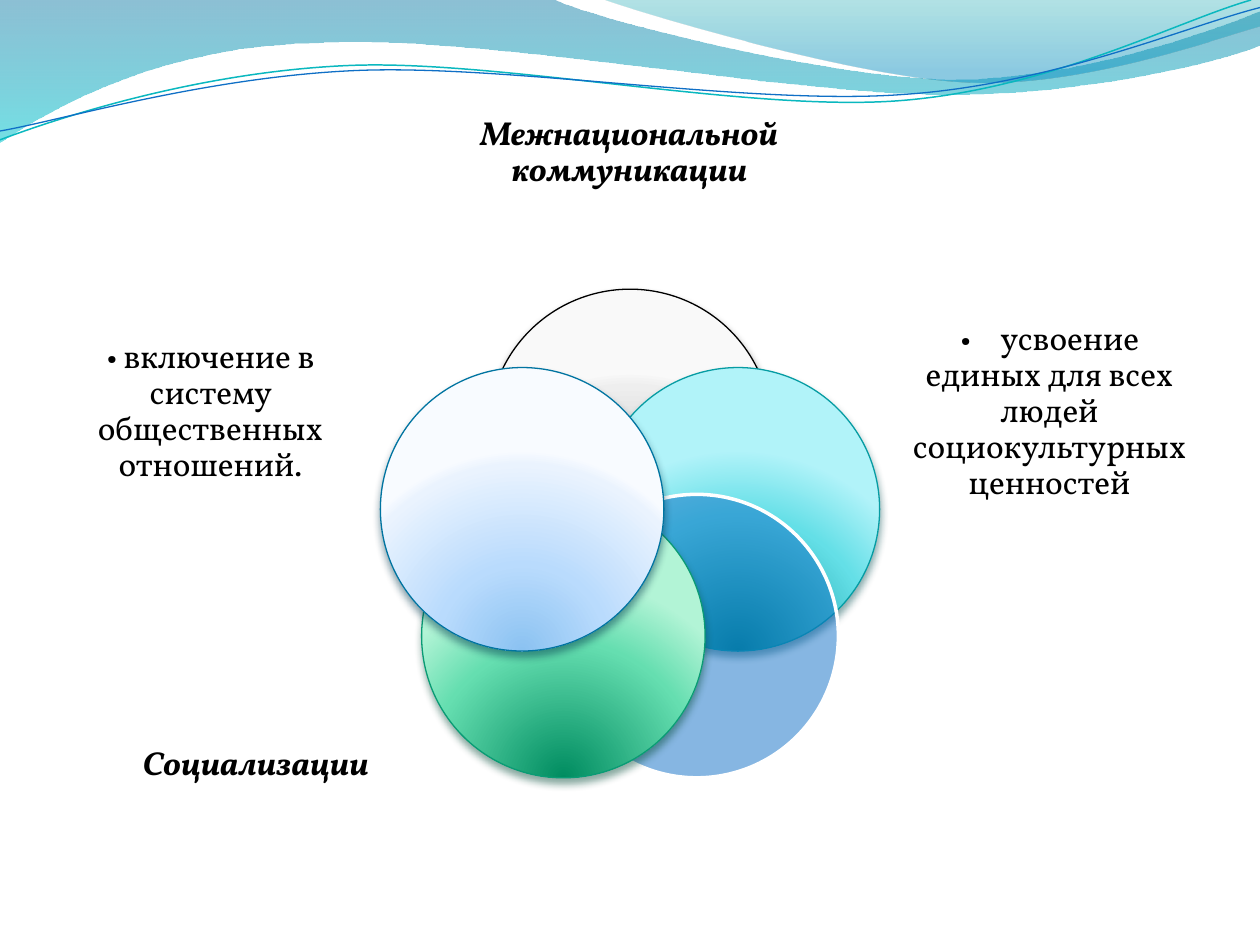
"""Build a slide with five overlapping circles, their captions and a wave header."""
from math import cos, radians, sin

from pptx import Presentation
from pptx.dml.color import RGBColor
from pptx.enum.shapes import MSO_SHAPE as Shape
from pptx.enum.text import MSO_ANCHOR as Anchor, PP_ALIGN as Align
from pptx.oxml import parse_xml
from pptx.oxml.ns import nsdecls
from pptx.util import Inches, Pt


def paint(shape, stops=(), angle=None, line=None, width=0.75, shadow=None):
    """Fill with (position, colour, opacity) stops; without an angle they are radial."""
    colours = [
        f'<a:srgbClr val="{colour}"><a:alpha val="{opacity * 1000}"/></a:srgbClr>'
        for _, colour, opacity in stops
    ]
    shape.fill.background()
    shape.shadow.inherit = False
    if line:
        shape.line.color.rgb = RGBColor.from_string(line)
        shape.line.width = Pt(width)
    else:
        shape.line.fill.background()
    properties = shape.element.spPr
    if len(stops) == 1:
        fill = f'<a:solidFill {nsdecls("a")}>{colours[0]}</a:solidFill>'
    elif stops:
        marks = "".join(
            f'<a:gs pos="{stop[0] * 1000}">{colour}</a:gs>' for stop, colour in zip(stops, colours)
        )
        direction = (
            '<a:path path="circle"><a:fillToRect l="50000" t="130000" r="50000" b="-30000"/></a:path>'
            if angle is None
            else f'<a:lin ang="{angle * 60000}" scaled="1"/>'
        )
        fill = f'<a:gradFill {nsdecls("a")} rotWithShape="1"><a:gsLst>{marks}</a:gsLst>{direction}</a:gradFill>'
    if stops:
        properties.replace(properties[2], parse_xml(fill))
    if shadow:
        properties[-1].append(parse_xml(
            f'<a:outerShdw {nsdecls("a")} blurRad="{Pt(4.5)}" dist="{Pt(3)}" dir="5400000" rotWithShape="0">'
            f'<a:srgbClr val="{shadow}"><a:alpha val="48000"/></a:srgbClr></a:outerShdw>'
        ))


def add_text(text, left, top, width, height, size=19, colour="000000", strong=False,
             bullet="", bullet_spacing=0):
    """Add a centred caption, with an optional bullet spaced out by some points."""
    box = slide.shapes.add_textbox(Inches(left), Inches(top), Inches(width), Inches(height))
    frame = box.text_frame
    frame.word_wrap = True
    frame.vertical_anchor = Anchor.MIDDLE
    frame.margin_left = frame.margin_top = frame.margin_right = frame.margin_bottom = 0
    para = frame.paragraphs[0]
    para.alignment = Align.CENTER
    para.line_spacing = 0.9
    for content, spacing in ((bullet, bullet_spacing), (text, 0)):
        if content:
            span = para.add_run()
            span.text = content
            span.font.name = "Vollkorn"
            span.font.size = Pt(size)
            span.font.bold = span.font.italic = strong
            span.font.color.rgb = RGBColor.from_string(colour)
            if spacing:
                span.font._element.set("spc", str(round(spacing * 100)))


deck = Presentation()
deck.slide_width, deck.slide_height = Inches(10), Inches(7.5)
slide = deck.slides.add_slide(deck.slide_layouts[6])

waves = [
    ([[(0, 0)], [(4.4, 0)], [(4.76, 0.17), (6.64, 0.63), (7.58, 0.63)],
      [(8.53, 0.63), (9.58, 0.26), (10, 0.09)], [(10, 0.36)],
      [(9.83, 0.44), (8.7, 0.76), (7.46, 0.75)], [(6.22, 0.75), (3.82, 0.28), (2.57, 0.34)],
      [(1.29, 0.36), (0.46, 0.83), (0, 1.13)]],
     dict(stops=[(0, "0074A1", 45), (100, "00C6CF", 55)], angle=90)),
    ([[(4.79, 0)], [(5.09, 0.11), (6.82, 0.62), (7.69, 0.65)],
      [(8.56, 0.69), (9.61, 0.32), (10, 0.21)], [(10, 0)]],
     dict(stops=[(0, "00A1A9", 30), (80, "008BBF", 45)], angle=90)),
    ([[(0, 1.11)], [(0.48, 0.93), (1.58, 0.57), (2.77, 0.52)],
      [(3.95, 0.47), (5.93, 0.89), (7.13, 0.8)], [(8.33, 0.71), (9.36, 0.16), (9.93, 0)]],
     dict(line="0AB8BF", width=0.85)),
    ([[(0, 1.04)], [(0.47, 0.96), (1.64, 0.61), (2.83, 0.56)],
      [(4.03, 0.51), (5.97, 0.84), (7.17, 0.75)], [(8.36, 0.67), (9.41, 0.21), (10, 0.06)]],
     dict(line="0F6FC6")),
]
for segments, look in waves:
    points = [(Inches(x), Inches(y)) for segment in segments for x, y in segment]
    builder = slide.shapes.build_freeform(*points[0])
    builder.add_line_segments(points[1:], close="stops" in look)
    wave = builder.convert_to_shape()
    outline = wave.element.xpath(".//a:path")[0]
    steps = iter(outline.xpath("a:lnTo"))
    for segment in segments[1:]:
        step = next(steps)
        if len(segment) == 3:
            curve = parse_xml(f'<a:cubicBezTo {nsdecls("a")}/>')
            outline.replace(step, curve)
            curve.append(step[0])
            for _ in range(2):
                step = next(steps)
                curve.append(step[0])
                outline.remove(step)
    paint(wave, **look)

diameter, orbit, center_x, center_y = 2.25, 0.9, 5, 4.32
circles = [
    dict(stops=[(0, "979797", 100), (43, "C6C6C6", 100), (93, "EEEEEE", 100), (100, "F9F9F9", 100)],
         line="000000", shadow="000000"),
    dict(stops=[(0, "008A91", 100), (68, "64DFE7", 100), (100, "B1F3F9", 100)],
         line="069CA3", shadow="024B4E"),
    dict(stops=[(0, "0F6FC6", 50)], line="FFFFFF", width=2),
    dict(stops=[(0, "008C60", 100), (68, "65DEB0", 100), (100, "B2F4D6", 100)],
         line="0A9B74", shadow="044A37"),
    dict(stops=[(0, "8BC2F1", 100), (43, "B9DBFD", 100), (93, "EAF3FE", 100), (100, "F8FBFF", 100)],
         line="0074A1", shadow="00374C"),
]
for index, look in enumerate(circles):
    turn = radians(index * 360 / len(circles))
    left = center_x + orbit * sin(turn) - diameter / 2
    top = center_y - orbit * cos(turn) - diameter / 2
    circle = slide.shapes.add_shape(
        Shape.OVAL, Inches(left), Inches(top), Inches(diameter), Inches(diameter))
    paint(circle, **look)

add_text("Межнациональной коммуникации", 3.69, 0.46, 2.61, 1.51, strong=True)
add_text("усвоение единых для всех людей социокультурных ценностей", 7.16, 2.45, 2.34, 1.64,
         bullet="• ", bullet_spacing=6.6)
add_text("Социализации", 0.86, 5.25, 2.34, 1.64, strong=True)
add_text("включение в систему общественных отношений.", 0.5, 2.45, 2.34, 1.64, bullet="• ")

deck.save("out.pptx")
